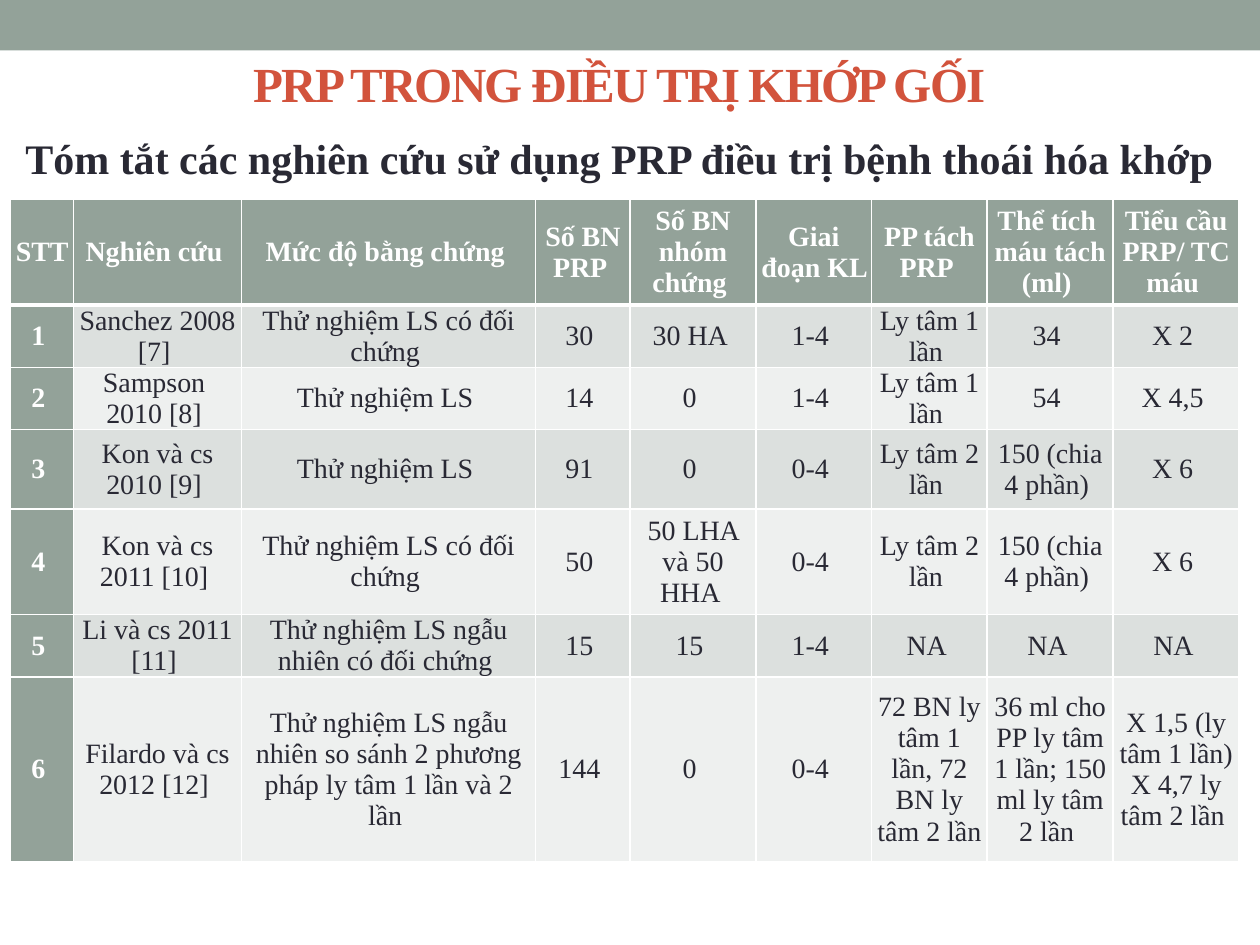
from lxml import etree
from pptx import Presentation
from pptx.dml.color import RGBColor
from pptx.enum.shapes import MSO_SHAPE
from pptx.enum.text import MSO_ANCHOR, MSO_AUTO_SIZE, PP_ALIGN
from pptx.oxml.ns import qn
from pptx.util import Cm, Pt

RECTANGLE = MSO_SHAPE.RECTANGLE
CENTER = PP_ALIGN.CENTER
MIDDLE = MSO_ANCHOR.MIDDLE
NO_AUTOFIT = MSO_AUTO_SIZE.NONE

SAGE = RGBColor(0x93, 0xA2, 0x99)
BAND_DARK = RGBColor(0xDC, 0xE0, 0xDE)
BAND_LIGHT = RGBColor(0xEE, 0xF0, 0xEF)
BRICK = RGBColor(0xD2, 0x53, 0x3C)
INK = RGBColor(0x29, 0x29, 0x34)
WHITE = RGBColor(0xFF, 0xFF, 0xFF)

FONT_NAME = "Times New Roman"
TITLE_FORMAT = {"name": FONT_NAME, "size": Pt(28), "bold": True}
SUBTITLE_FORMAT = {"name": FONT_NAME, "size": Pt(24), "bold": True}
HEADING_FORMAT = {"name": FONT_NAME, "size": Pt(16), "bold": True}
BODY_FORMAT = {"name": FONT_NAME, "size": Pt(16), "bold": False}
CELL_FORMAT = {
    "vertical_anchor": MIDDLE,
    "margin_left": Cm(0.1),
    "margin_right": Cm(0.1),
    "margin_top": 0,
    "margin_bottom": 0,
}

COLUMN_WIDTHS = [1.27, 3.39, 5.93, 1.9, 2.54, 2.33, 2.33, 2.54, 2.54]
ROW_HEIGHTS = [2.13, 1.25, 1.25, 1.6, 2.13, 1.25, 3.73]
STUDIES = [
    ["STT", "Nghiên cứu", "Mức độ bằng chứng", "Số BN PRP", "Số BN nhóm chứng",
     "Giai đoạn KL", "PP tách PRP", "Thể tích\nmáu tách (ml)",
     "Tiểu cầu PRP/ TC máu"],
    ["1", "Sanchez 2008 [7]", "Thử nghiệm LS có đối chứng", "30", "30 HA",
     "1-4", "Ly tâm 1 lần", "34", "X 2"],
    ["2", "Sampson\n2010 [8]", "Thử nghiệm LS", "14", "0",
     "1-4", "Ly tâm 1 lần", "54", "X 4,5"],
    ["3", "Kon và cs 2010 [9]", "Thử nghiệm LS", "91", "0",
     "0-4", "Ly tâm 2 lần", "150 (chia 4 phần)", "X 6"],
    ["4", "Kon và cs 2011 [10]", "Thử nghiệm LS có đối chứng", "50",
     "50 LHA và 50 HHA", "0-4", "Ly tâm 2 lần", "150 (chia 4 phần)", "X 6"],
    ["5", "Li và cs 2011 [11]", "Thử nghiệm LS ngẫu nhiên có đối chứng", "15",
     "15", "1-4", "NA", "NA", "NA"],
    ["6", "Filardo và cs 2012 [12]",
     "Thử nghiệm LS ngẫu nhiên so sánh 2 phương pháp ly tâm 1 lần và 2 lần",
     "144", "0", "0-4", "72 BN ly tâm 1 lần, 72 BN ly tâm 2 lần",
     "36 ml cho PP ly tâm 1 lần; 150 ml ly tâm 2 lần",
     "X 1,5 (ly tâm 1 lần)\nX 4,7 ly tâm 2 lần"],
]


def apply_format(target, values):
    for attribute, value in values.items():
        setattr(target, attribute, value)


def write_centered(frame, text, font_format, color):
    """Fill the frame with one centred paragraph per line of text."""
    frame.text = text
    for paragraph in frame.paragraphs:
        paragraph.alignment = CENTER
        for run in paragraph.runs:
            apply_format(run.font, font_format)
            run.font.color.rgb = color


def add_banner(slide, width):
    banner = slide.shapes.add_shape(RECTANGLE, 0, 0, width, Cm(1.02))
    banner.shadow.inherit = False
    banner.fill.solid()
    banner.fill.fore_color.rgb = SAGE
    banner.line.fill.background()


def set_title(slide, text):
    title = slide.shapes.title
    apply_format(title, {"left": Cm(1.06), "top": Cm(0.82),
                         "width": Cm(22.86), "height": Cm(1.7)})
    frame = title.text_frame
    apply_format(frame, {"vertical_anchor": MIDDLE, "word_wrap": True,
                         "auto_size": NO_AUTOFIT})
    write_centered(frame, text, TITLE_FORMAT, BRICK)
    letter_spacing = "-100"
    frame.paragraphs[0].runs[0].font._element.set("spc", letter_spacing)


def add_subtitle(slide, text):
    subtitle = slide.shapes.add_textbox(0, Cm(2.54), Cm(24.97), Cm(1.28))
    subtitle.text_frame.word_wrap = True
    write_centered(subtitle.text_frame, text, SUBTITLE_FORMAT, INK)


def set_borders(cell, top_width, bottom_width):
    """Draw white cell borders; the side ones are 1 pt wide."""
    properties = cell._tc.get_or_add_tcPr()
    widths = {"a:lnL": 1, "a:lnR": 1, "a:lnT": top_width, "a:lnB": bottom_width}
    for position, (tag, width) in enumerate(widths.items()):
        border = etree.Element(qn(tag), w=str(Pt(width)))
        fill = etree.SubElement(border, qn("a:solidFill"))
        etree.SubElement(fill, qn("a:srgbClr"), val=str(WHITE))
        properties.insert(position, border)


def format_cell(cell, text, row, column):
    is_heading = row == 0 or column == 0
    apply_format(cell, CELL_FORMAT)
    # A space closes each line and shifts the centred text slightly left.
    spaced_text = "\n".join(f"{line} " for line in text.split("\n"))
    write_centered(cell.text_frame, spaced_text,
                   HEADING_FORMAT if is_heading else BODY_FORMAT,
                   WHITE if is_heading else INK)
    band = BAND_DARK if row % 2 else BAND_LIGHT
    cell.fill.solid()
    cell.fill.fore_color.rgb = SAGE if is_heading else band
    set_borders(cell, top_width=3 if row == 1 else 1,
                bottom_width=3 if row == 0 else 1)


def add_study_table(slide):
    table = slide.shapes.add_table(
        len(ROW_HEIGHTS), len(COLUMN_WIDTHS), Cm(0.21), Cm(4.02),
        Cm(sum(COLUMN_WIDTHS)), Cm(sum(ROW_HEIGHTS))).table
    apply_format(table, {"first_col": True, "horz_banding": False})
    for table_column, width in zip(table.columns, COLUMN_WIDTHS):
        table_column.width = Cm(width)
    for table_row, height in zip(table.rows, ROW_HEIGHTS):
        table_row.height = Cm(height)
    for row, study in enumerate(STUDIES):
        for column, text in enumerate(study):
            format_cell(table.cell(row, column), text, row, column)


def main():
    presentation = Presentation()
    apply_format(presentation, {"slide_width": Cm(25.4),
                                "slide_height": Cm(19.05)})
    title_only = presentation.slide_layouts[5]
    slide = presentation.slides.add_slide(title_only)
    add_banner(slide, presentation.slide_width)
    set_title(slide, "PRP TRONG ĐIỀU TRỊ KHỚP GỐI")
    add_study_table(slide)
    add_subtitle(slide, "Tóm tắt các nghiên cứu sử dụng PRP điều trị bệnh thoái hóa khớp")
    presentation.save("out.pptx")


if __name__ == "__main__":
    main()
